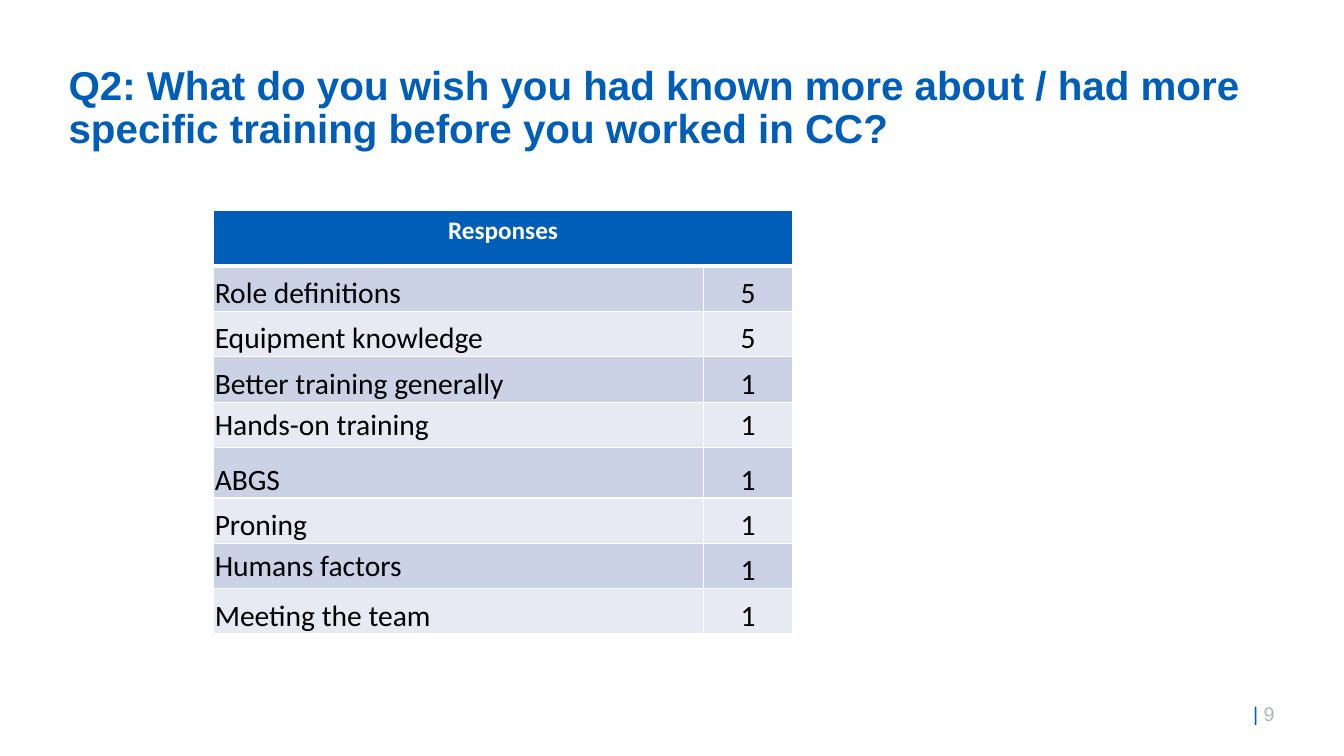
from lxml import etree
from pptx import Presentation
from pptx.dml.color import RGBColor
from pptx.enum import text
from pptx.oxml.ns import qn
from pptx.util import Inches, Pt

BLUE, WHITE, BLACK, GREY = "005EB8", "FFFFFF", "000000", "ADB6BE"
BANDS = ("CCD2E6", "E7EAF3")
BOTTOM, MIDDLE = text.MSO_ANCHOR.BOTTOM, text.MSO_ANCHOR.MIDDLE
LEFT, CENTER = text.PP_ALIGN.LEFT, text.PP_ALIGN.CENTER
RESPONSES = [
    ("Role definitions", 5, BOTTOM, BOTTOM),
    ("Equipment knowledge", 5, BOTTOM, BOTTOM),
    ("Better training generally", 1, BOTTOM, BOTTOM),
    ("Hands-on training", 1, MIDDLE, MIDDLE),
    ("ABGS", 1, BOTTOM, BOTTOM),
    ("Proning", 1, BOTTOM, BOTTOM),
    ("Humans factors", 1, MIDDLE, BOTTOM),
    ("Meeting the team", 1, BOTTOM, BOTTOM),
]


def rgb(value):
    return RGBColor.from_string(value)


def add_run(p, words, size, font, color, bold=False):
    r = p.add_run()
    r.text = words
    r.font.size = Pt(size)
    r.font.name = font
    r.font.bold = bold
    r.font.color.rgb = rgb(color)


def set_borders(cell, bottom=1):
    tcPr = cell._tc.get_or_add_tcPr()
    widths = (("lnL", 1), ("lnR", 1), ("lnT", 1), ("lnB", bottom))
    for i, (side, width) in enumerate(widths):
        ln = etree.Element(qn(f"a:{side}"), w=str(Pt(width)))
        fill = etree.SubElement(ln, qn("a:solidFill"))
        etree.SubElement(fill, qn("a:srgbClr"), val=WHITE)
        tcPr.insert(i, ln)


def set_cell(cell, words, fill, size, color, align, bold=False, bottom=1):
    cell.fill.solid()
    cell.fill.fore_color.rgb = rgb(fill)
    set_borders(cell, bottom)
    p = cell.text_frame.paragraphs[0]
    p.alignment = align
    add_run(p, words, size, "Calibri", color, bold)


def set_body_cell(cell, words, fill, align, anchor):
    set_cell(cell, words, fill, 21.1, BLACK, align)
    cell.vertical_anchor = anchor
    cell.margin_left = cell.margin_right = cell.margin_top = Inches(0.01)
    cell.margin_bottom = 0


def set_title(s, words):
    sp = s.shapes.title
    sp.left, sp.top = Inches(0.58), Inches(0.6)
    sp.width, sp.height = Inches(12.18), Inches(0.67)
    tf = sp.text_frame
    tf.word_wrap = True
    tf.auto_size = text.MSO_AUTO_SIZE.NONE
    tf.vertical_anchor = text.MSO_ANCHOR.TOP
    p = tf.paragraphs[0]
    p.alignment = LEFT
    p.line_spacing = 0.9
    p.space_before = Pt(0)
    add_run(p, words, 28.8, "Arial", BLUE, True)


def add_responses(s):
    frame = s.shapes.add_table(len(RESPONSES) + 1, 2, Inches(2.12), Inches(2.09),
                               Inches(5.74), Inches(4.2))
    table = frame.table
    for column, width in zip(table.columns, (4.86, 0.88)):
        column.width = Inches(width)
    for row in table.rows:
        row.height = Inches(0.45)
    table.rows[0].height = Inches(0.55)
    table.rows[5].height = Inches(0.5)
    header = table.cell(0, 0)
    header.merge(table.cell(0, 1))
    set_cell(header, "Responses", BLUE, 18, WHITE, CENTER, True, 3)
    set_borders(table.cell(0, 1), 3)
    for i, (topic, count, topic_anchor, count_anchor) in enumerate(RESPONSES):
        fill = BANDS[i % 2]
        set_body_cell(table.cell(i + 1, 0), topic, fill, LEFT, topic_anchor)
        set_body_cell(table.cell(i + 1, 1), str(count), fill, CENTER, count_anchor)


def add_page_number(s, number):
    sp = s.shapes.add_textbox(Inches(12.33), Inches(6.91), Inches(0.94), Inches(0.34))
    tf = sp.text_frame
    tf.word_wrap = True
    p = tf.paragraphs[0]
    add_run(p, "| ", 14.1, "Arial", BLUE)
    add_run(p, str(number), 14.1, "Arial", GREY)


def main():
    prs = Presentation()
    prs.slide_width, prs.slide_height = Inches(13.33), Inches(7.5)
    s = prs.slides.add_slide(prs.slide_layouts[5])
    set_title(s, "Q2: What do you wish you had known more about / had more "
                 "specific training before you worked in CC?")
    add_responses(s)
    add_page_number(s, 9)
    prs.save("out.pptx")


if __name__ == "__main__":
    main()
